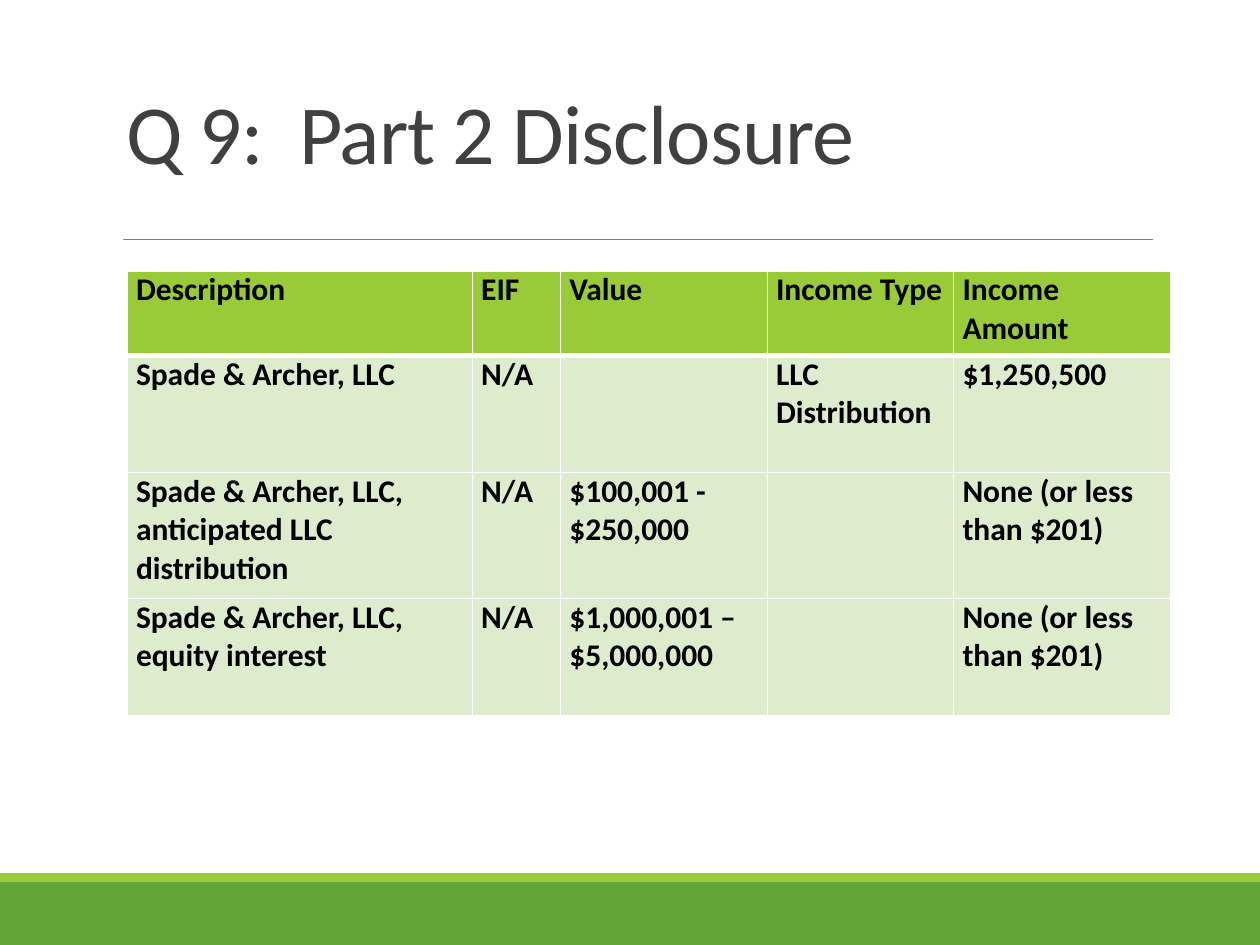
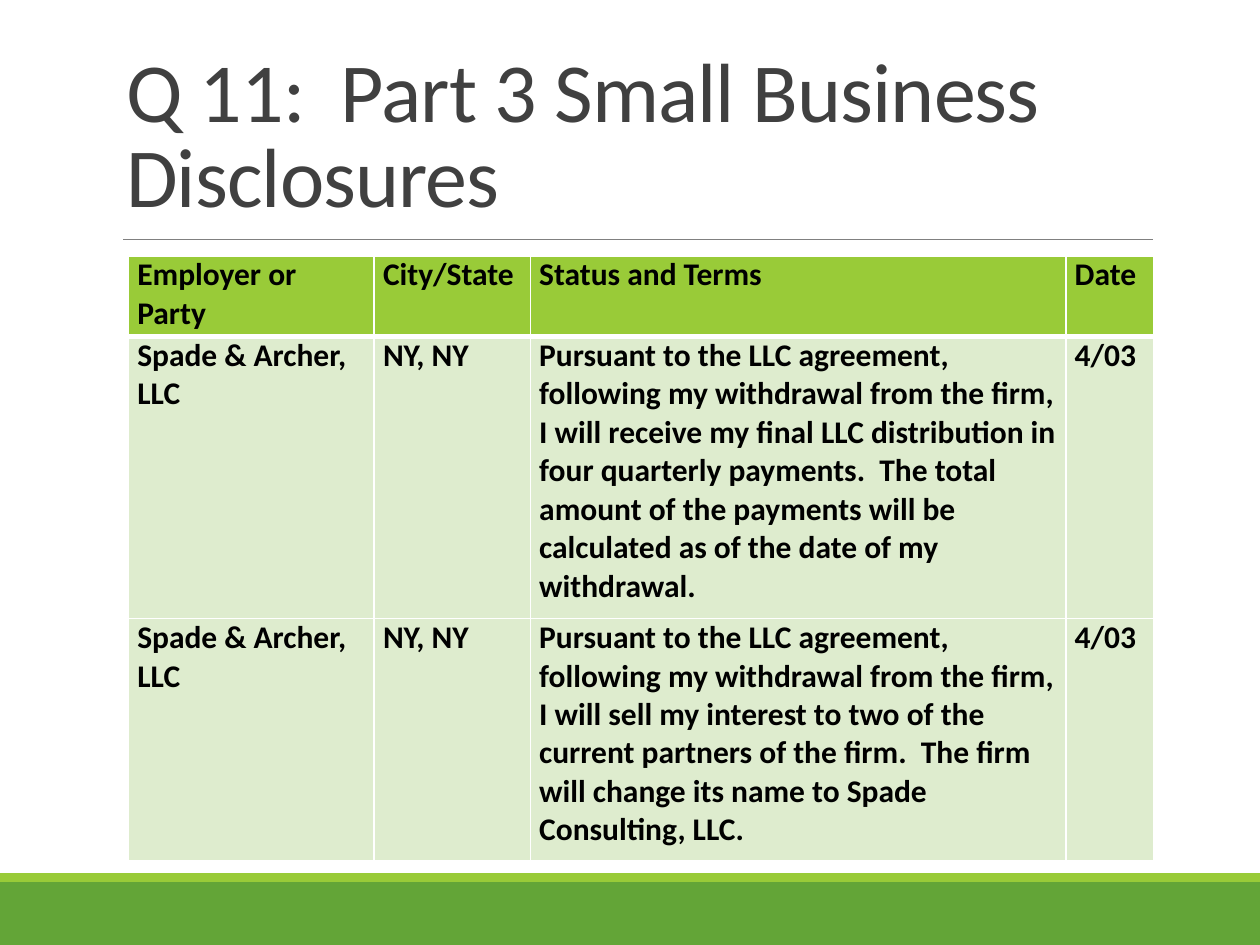
"""Build two disclosure slides, each with a title and a table."""
from dataclasses import dataclass

from pptx import Presentation, oxml
from pptx import util as u
from pptx.dml import color
from pptx.enum import shapes, text
from pptx.oxml import ns

FIRM = "Spade & Archer, LLC"
NONE = "None (or less than $201)"
LEAD = "Pursuant to the LLC agreement, following my withdrawal from the firm, I will "

PAGES = [
    {
        "title": "Q 9:  Part 2 Disclosure",
        "at": (1.01, 2.15),
        "cols": (2.74, 0.7, 1.64, 1.48, 1.72),
        "rows": (0.67, 0.93, 1, 0.93),
        "cells": [
            ("Description", "EIF", "Value", "Income Type", "Income Amount"),
            (FIRM, "N/A", "", "LLC Distribution", "$1,250,500"),
            (FIRM + ", anticipated LLC distribution", "N/A", "$100,001 - $250,000", "", NONE),
            (FIRM + ", equity interest", "N/A", "$1,000,001 –\n$5,000,000", "", NONE),
        ],
    },
    {
        "title": "Q 11:  Part 3 Small Business Disclosures",
        "at": (1.02, 2.03),
        "cols": (1.95, 1.24, 4.25, 0.7),
        "rows": (0.64, 2.24, 1.92),
        "cells": [
            ("Employer or Party", "City/State", "Status and Terms", "Date"),
            (FIRM, "NY, NY", LEAD + "receive my final LLC distribution in four quarterly "
             "payments.  The total amount of the payments will be calculated as of the "
             "date of my withdrawal.", "4/03"),
            (FIRM, "NY, NY", LEAD + "sell my interest to two of the current partners of "
             "the firm.  The firm will change its name to Spade Consulting, LLC.", "4/03"),
        ],
    },
]


@dataclass(frozen=True)
class Theme:
    font: str = "Calibri"
    head: str = "404040"
    ink: str = "000000"
    rule: str = "808080"
    dark: str = "63A537"
    lime: str = "99CB38"
    pale: str = "DEECCE"
    edge: str = "FFFFFF"
    big: int = 48
    small: int = 18


LOOK = Theme()
BANDS = [(7, 0.5, LOOK.dark), (6.93, 0.07, LOOK.lime)]


def rgb(code):
    return color.RGBColor.from_string(code)


def write(frame, words, size=LOOK.small, ink=LOOK.ink, bold=False, lead=None, track=None):
    frame.text = words
    for para in frame.paragraphs:
        para.alignment = text.PP_ALIGN.LEFT
        para.line_spacing = lead
        for run in para.runs:
            font = run.font
            font.name, font.size, font.bold = LOOK.font, u.Pt(size), bold
            font.color.rgb = rgb(ink)
            if track:
                run._r.get_or_add_rPr().set("spc", str(int(track * 100)))


def edge(cell, side, width):
    cell._tc.get_or_add_tcPr().append(oxml.parse_xml(
        f'<a:ln{side} {ns.nsdecls("a")} w="{u.Pt(width)}"><a:solidFill>'
        f'<a:srgbClr val="{LOOK.edge}"/></a:solidFill></a:ln{side}>'))


def frame(slide):
    for top, tall, fill in BANDS:
        band = slide.shapes.add_shape(shapes.MSO_SHAPE.RECTANGLE, 0, u.Inches(top),
                                      u.Inches(10), u.Inches(tall))
        band.shadow.inherit = False
        band.fill.solid()
        band.fill.fore_color.rgb = rgb(fill)
        band.line.fill.background()
    rule = slide.shapes.add_connector(shapes.MSO_CONNECTOR.STRAIGHT, u.Inches(0.98),
                                      u.Inches(1.9), u.Inches(9.15), u.Inches(1.9))
    rule.line.color.rgb = rgb(LOOK.rule)
    rule.line.width = u.Pt(0.5)
    rule._element.spPr.append(oxml.parse_xml(f'<a:effectLst {ns.nsdecls("a")}/>'))


def head(slide, words):
    box = slide.shapes.title
    box.left, box.top, box.width, box.height = map(u.Inches, (0.9, 0.31, 8.25, 1.59))
    area = box.text_frame
    area.word_wrap = True
    area.auto_size = text.MSO_AUTO_SIZE.NONE
    area.vertical_anchor = text.MSO_ANCHOR.MIDDLE
    write(area, words, size=LOOK.big, ink=LOOK.head, lead=0.85, track=-0.5)


def grid(slide, page):
    cols, rows = page["cols"], page["rows"]
    spot = map(u.Inches, (*page["at"], sum(cols), sum(rows)))
    table = slide.shapes.add_table(len(rows), len(cols), *spot).table
    table.horz_banding = False
    for col, wide in zip(table.columns, cols):
        col.width = u.Inches(wide)
    for y, (row, tall) in enumerate(zip(table.rows, rows)):
        row.height = u.Inches(tall)
        for cell, words in zip(row.cells, page["cells"][y]):
            cell.margin_left = cell.margin_right = u.Inches(0.07)
            cell.margin_top = cell.margin_bottom = 0
            for side, width in zip("LRTB", (1, 1, 3 if y == 1 else 1, 1 if y else 3)):
                edge(cell, side, width)
            cell.fill.solid()
            cell.fill.fore_color.rgb = rgb(LOOK.pale if y else LOOK.lime)
            write(cell.text_frame, words, bold=True)


def main():
    deck = Presentation()
    deck.slide_width, deck.slide_height = u.Inches(10), u.Inches(7.5)
    for page in PAGES:
        slide = deck.slides.add_slide(deck.slide_layouts[5])
        frame(slide)
        head(slide, page["title"])
        grid(slide, page)
    deck.save("out.pptx")


if __name__ == "__main__":
    main()
